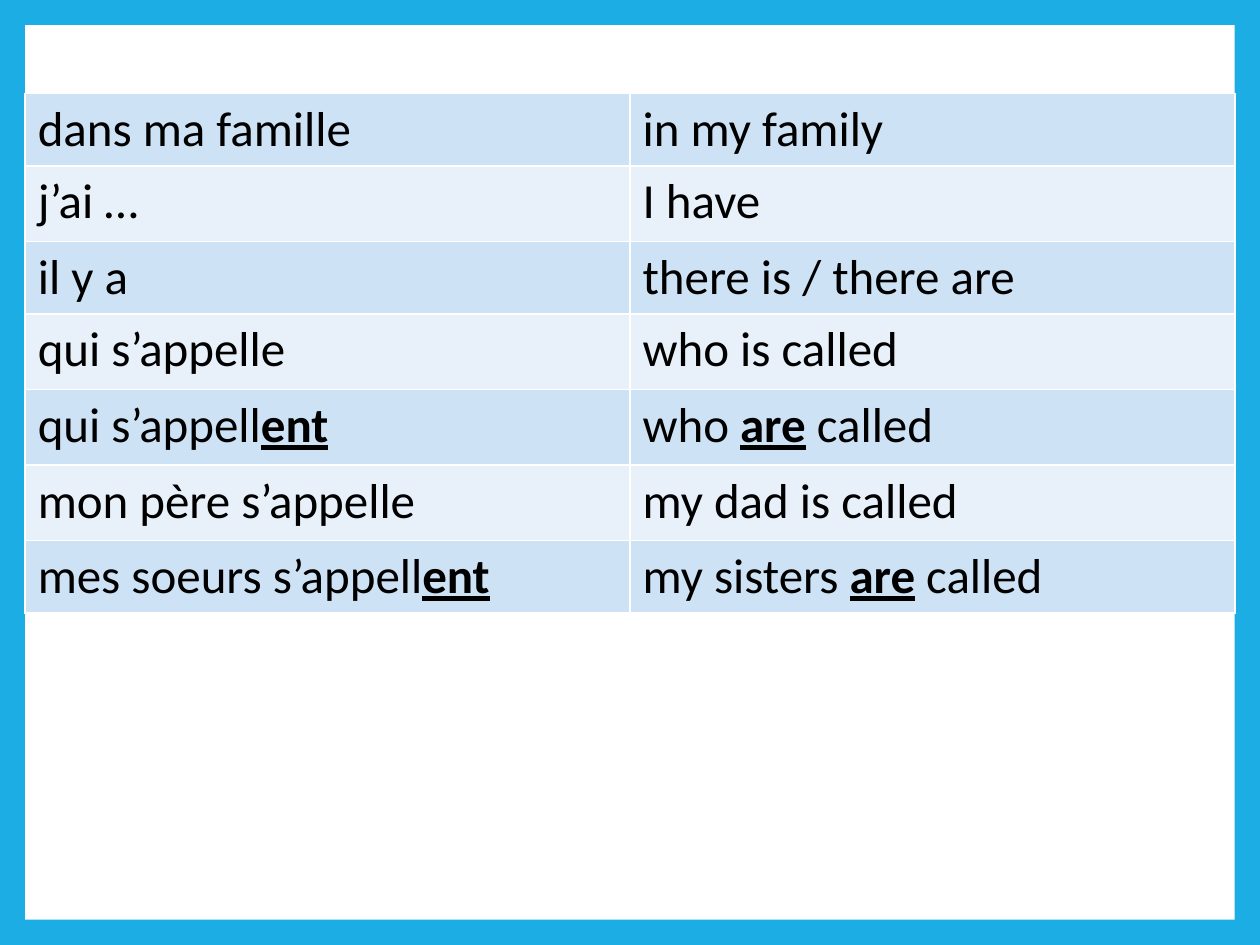
from lxml.etree import SubElement
from pptx import Presentation
from pptx.dml.color import RGBColor
from pptx.enum.shapes import MSO_SHAPE
from pptx.oxml.ns import qn
from pptx.util import Inches, Pt

# Content: French, English, row height; stressed parts stand between asterisks
PHRASES = [
    ("dans ma famille", "in my family", 0.57),
    ("j’ai …", "I have", 0.6),
    ("il y a", "there is / there are", 0.57),
    ("qui s’appelle", "who is called", 0.6),
    ("qui s’appell*ent*", "who *are* called", 0.6),
    ("mon père s’appelle", "my dad is called", 0.6),
    ("mes soeurs s’appell*ent*", "my sisters *are* called", 0.57),
]
FRAME, PAPER, INK = "1CADE4", "FFFFFF", "000000"
BANDS = ["CDE3F5", "E8F1FA"]
WIDTH, HEIGHT, MARGIN = 10, 7.5, 0.2
TABLE_TOP, COLUMN_WIDTH = 0.74, 4.8


def color(hex_string):
    return RGBColor.from_string(hex_string)


def fill(part, hex_string):
    part.fill.solid()
    part.fill.fore_color.rgb = color(hex_string)


def write(cell, marked_text):
    paragraph = cell.text_frame.paragraphs[0]
    for index, piece in enumerate(marked_text.split("*")):
        if not piece:
            continue
        run = paragraph.add_run()
        run.text = piece
        font = run.font
        font.name, font.size = "Calibri", Pt(28)
        font.color.rgb = color(INK)
        font.bold = font.underline = index % 2 == 1


def add_borders(cell):
    properties = cell._tc.get_or_add_tcPr()
    for position, side in enumerate(("a:lnL", "a:lnR", "a:lnT", "a:lnB")):
        line = SubElement(properties, qn(side), w=str(Pt(1)))
        SubElement(SubElement(line, qn("a:solidFill")), qn("a:srgbClr"), val=PAPER)
        properties.insert(position, line)  # borders come before the fill


presentation = Presentation()
presentation.slide_width, presentation.slide_height = Inches(WIDTH), Inches(HEIGHT)
slide = presentation.slides.add_slide(presentation.slide_layouts[6])

# Blue frame around a white page
fill(slide.background, FRAME)
page = slide.shapes.add_shape(
    MSO_SHAPE.RECTANGLE, Inches(MARGIN), Inches(MARGIN),
    Inches(WIDTH - 2 * MARGIN), Inches(HEIGHT - 2 * MARGIN))
fill(page, PAPER)
page.line.fill.background()
page.shadow.inherit = False

# Vocabulary table
vocabulary = slide.shapes.add_table(
    len(PHRASES), 2, Inches(MARGIN), Inches(TABLE_TOP),
    Inches(2 * COLUMN_WIDTH), Inches(sum(height for *_, height in PHRASES))).table
vocabulary.first_row = False
for column in vocabulary.columns:
    column.width = Inches(COLUMN_WIDTH)
for number, (french, english, height) in enumerate(PHRASES):
    vocabulary.rows[number].height = Inches(height)
    for cell, phrase in zip(vocabulary.rows[number].cells, (french, english)):
        write(cell, phrase)
        fill(cell, BANDS[number % 2])
        add_borders(cell)

presentation.save("out.pptx")
